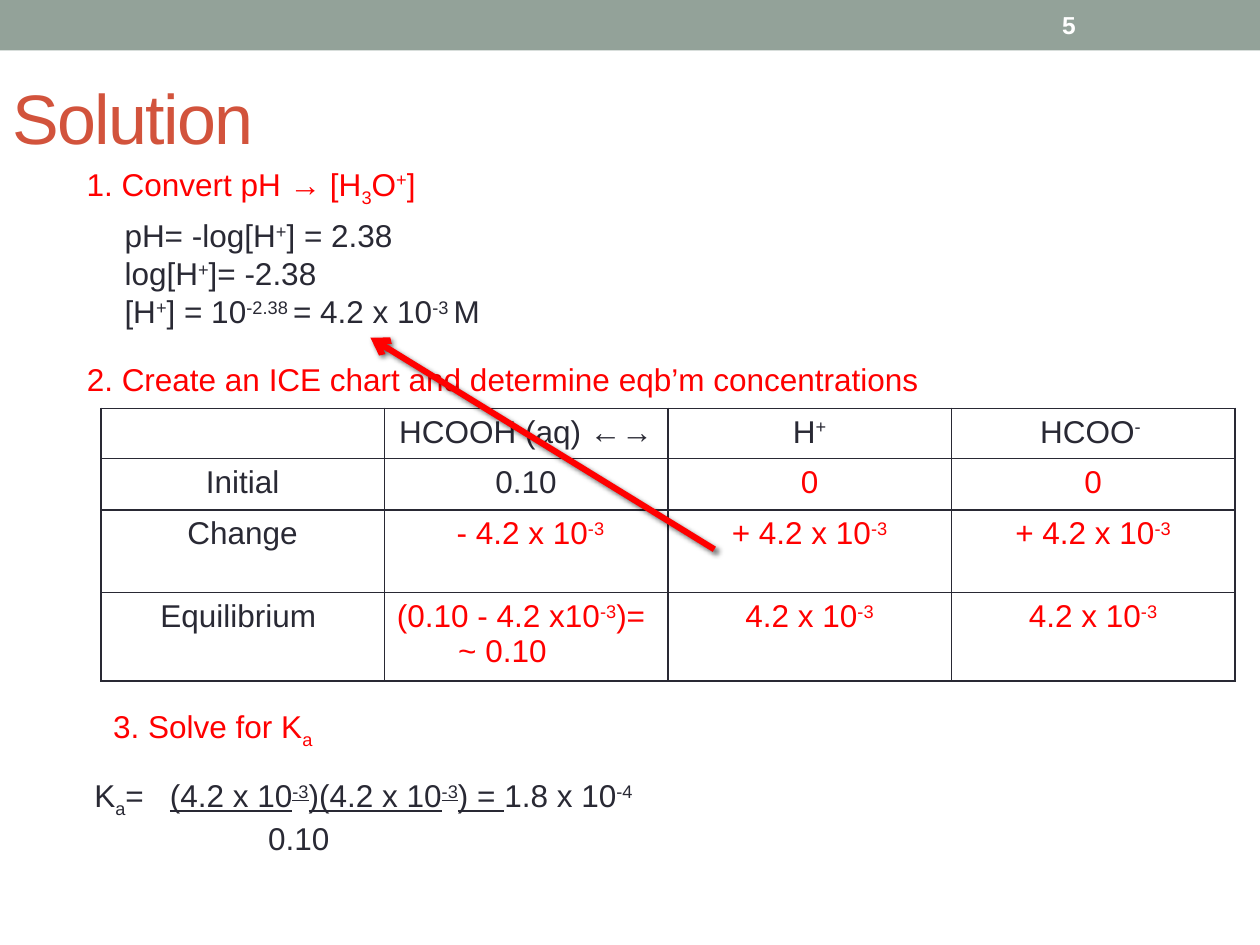
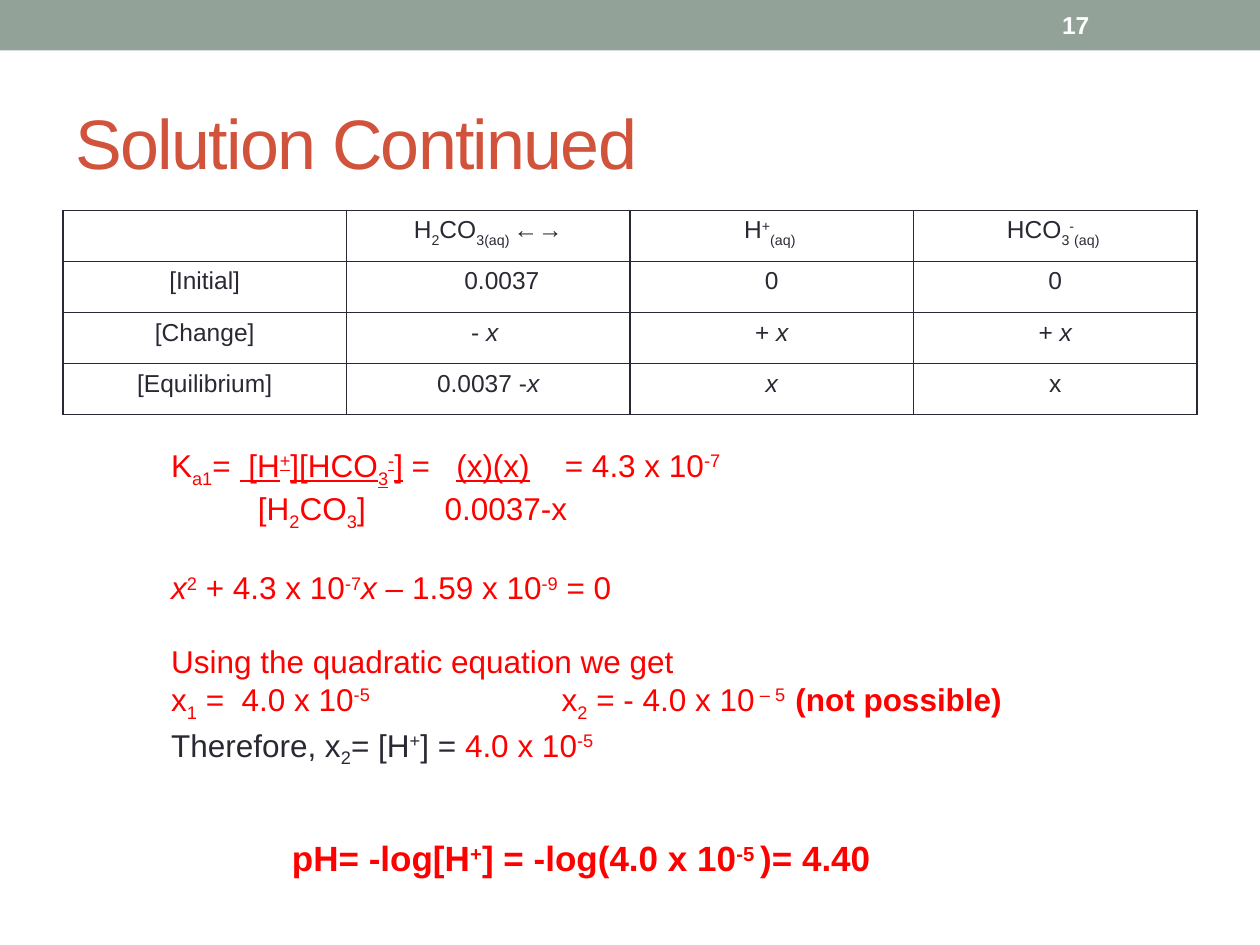
"""Build two slides that solve acid equilibrium problems with ICE tables."""
from lxml import etree
from pptx import Presentation
from pptx.dml.color import RGBColor
from pptx.enum.shapes import MSO_CONNECTOR, MSO_SHAPE
from pptx.enum.text import MSO_ANCHOR, MSO_AUTO_SIZE, PP_ALIGN
from pptx.oxml.ns import qn
from pptx.util import Pt

INK = RGBColor(0x29, 0x29, 0x34)
RED = RGBColor(0xFF, 0x00, 0x00)
RUST = RGBColor(0xD2, 0x53, 0x3C)
SAGE = RGBColor(0x93, 0xA2, 0x99)
WHITE = RGBColor(0xFF, 0xFF, 0xFF)
LEFT, CENTER = PP_ALIGN.LEFT, PP_ALIGN.CENTER
MIDDLE, TOP = MSO_ANCHOR.MIDDLE, MSO_ANCHOR.TOP
NO_FIT = MSO_AUTO_SIZE.NONE
RECT, STRAIGHT = MSO_SHAPE.RECTANGLE, MSO_CONNECTOR.STRAIGHT
FONT = "Arial"
WIDE, HIGH = 720, 540
COL = 162

# Markup is {flags:text}: ^ raised, _ lowered, u underlined, i italic, b bold, r red.
# A line is (markup, space before, tab stops...).
SLIDES = [
    {
        "title": "Solution", "spot": (0, 27.4), "page": "5",
        "table": {
            "spot": (57.6, 233.3), "size": 18, "rows": (28, 29.2, 47.4, 47.4),
            "cells": [
                ["", "HCOOH (aq) ←→", "H{^:+}", "HCOO{^:- }"],
                ["Initial", "0.10", "{r:0}", "{r:0}"],
                ["Change", " {r:- 4.2 x 10}{r^:-3}",
                 "{r:+ 4.2 x 10}{r^:-3}", "{r:+ 4.2 x 10}{r^:-3}"],
                ["Equilibrium ", [("{r:(0.10 - 4.2 x10}{r^:-3}{r:)= }", 0),
                                  ("{r:\t~ 0.10}", 0, 35)],
                 "{r:4.2 x 10}{r^:-3}", "{r:4.2 x 10}{r^:-3}"],
            ],
            "shift": {},
        },
        "texts": [
            (64.1, 120.2, 230, 18, INK, [
                ("pH= -log[H{^:+}] = 2.38", 0),
                ("log[H{^:+}]= -2.38", 0),
                ("[H{^:+}] = 10{^:-2.38 }= 4.2 x 10{^:-3 }M", 0)]),
            (42.5, 90.7, 210, 18, RED, [("1. Convert pH → [H{_:3}O{^:+}]", 0)]),
            (42.5, 202.3, 517, 18, RED, [
                ("2. Create an ICE chart and determine eqb’m concentrations", 0)]),
            (57.6, 400.3, 140, 18, RED, [("3. Solve for K{_:a}", 0)]),
            (46.8, 439.9, 335, 18, INK, [
                ("K{_:a}=\t{u:(4.2 x 10}{u^:-3}{u:)(4.2 x 10}{u^:-3}{u:) = }"
                 "1.8 x 10{^:-4}", 0, 43.2),
                ("\t0.10", 0, 99.4)]),
        ],
        "arrow": (408.2, 313.9, 211.7, 193),
    },
    {
        "title": "Solution Continued", "spot": (36, 41.8), "page": "17",
        "table": {
            "spot": (36, 120.2), "size": 14, "rows": (29.2,) * 4,
            "cells": [
                ["", "H{_:2}CO{_:3(aq) }←→", "H{^:+}{_:(aq) }",
                 "HCO{_:3}{^:-}{_:(aq) }"],
                ["[Initial]", "0.0037", "0", "0"],
                ["[Change]", "- {i:x }", "+ {i:x}", "+ {i:x}"],
                ["[Equilibrium]", "0.0037 -{i:x}", "{i:x}", "x"],
            ],
            "shift": {(1, 1): 15.6},
        },
        "texts": [
            (90.7, 251.3, 584, 18, RED, [
                ("K{_:a1}= {u: [H}{u^:+}{u:][HCO}{u_:3}{u^:-}{u:]} = "
                 "{u:\t(x)(x)\t}= 4.3 x 10{^:-7}", 0, 163, 225),
                ("\t[H{_:2}CO{_:3}]\t0.0037-x", 0, 49.6, 156.3),
                ("{i:x}{^:2} + 4.3 x 10{^:-7}{i:x – }1.59 x 10{^:-9} = 0", 20.7),
                ("Using the quadratic equation we get", 20.7),
                ("x{_:1} =  4.0 x 10{^:-5}\tx{_:2} = - 4.0 x 10{^: – 5  }"
                 "{b:(not possible)}", 0, 223.2)]),
            (90.7, 411.1, 460, 18, INK, [
                ("Therefore, x{_:2}= [H{^:+}] = {r:4.0 x 10}{r^:-5}", 0)]),
            (159.8, 474.5, 360, 20, RED, [
                ("{b:pH= -log[H}{b^:+}{b:] = -log(4.0 x 10}{b^:-5 }{b:)= 4.40}", 0)]),
        ],
        "arrow": None,
    },
]


def node(parent, tag, **attrs):
    """Append a drawing element with the given attributes."""
    child = etree.SubElement(parent, qn(tag))
    for key, val in attrs.items():
        child.set(key, str(val))
    return child


def add_run(para, text, size, color, flags=""):
    """Add one run in the style its flags name."""
    run = para.add_run()
    run.text = text
    font = run.font
    font.name, font.size = FONT, Pt(size)
    font.color.rgb = RED if "r" in flags else color
    font.bold, font.italic = "b" in flags, "i" in flags
    font.underline = "u" in flags
    base = 30000 if "^" in flags else -25000 if "_" in flags else 0
    if base:
        run._r.get_or_add_rPr().set("baseline", str(base))
    return run


def add_lines(frame, lines, size, color, align=LEFT):
    """Fill a text frame with one paragraph a line."""
    for num, (text, gap, *stops) in enumerate(lines):
        para = frame.add_paragraph() if num else frame.paragraphs[0]
        para.alignment, para.space_before = align, Pt(gap)
        if stops:
            tabs = node(para._p.get_or_add_pPr(), "a:tabLst")
            for stop in stops:
                node(tabs, "a:tab", pos=int(Pt(stop)), algn="l")
        for num2, part in enumerate(text.replace("}", "{").split("{")):
            flags, mark, words = part.partition(":") if num2 % 2 else ("", "", part)
            if words:
                add_run(para, words, size, color, flags)


def add_text(slide, left, top, width, size, color, lines):
    """Add a wrapped text box."""
    high = size * 1.2 * len(lines) + 7.2
    box = slide.shapes.add_textbox(Pt(left), Pt(top), Pt(width), Pt(high))
    box.text_frame.word_wrap = True
    add_lines(box.text_frame, lines, size, color)
    return box


def add_frame(slide, title, spot, page):
    """Add the band, title and page number that all slides share."""
    band = slide.shapes.add_shape(RECT, 0, 0, Pt(WIDE), Pt(28.8))
    band.shadow.inherit = False
    band.fill.solid()
    band.fill.fore_color.rgb = SAGE
    band.line.fill.background()
    head = slide.shapes.title
    head.left, head.top = map(Pt, spot)
    head.width, head.height = Pt(648), Pt(77.8)
    frame = head.text_frame
    frame.auto_size, frame.vertical_anchor = NO_FIT, MIDDLE
    para = frame.paragraphs[0]
    para.alignment = LEFT
    run = add_run(para, title, 40, RUST)
    run._r.get_or_add_rPr().set("spc", "-100")
    box = add_text(slide, 599.8, 1.4, 84, 14, WHITE, [("{b:" + page + "}", 0)])
    box.height = Pt(25.9)
    box.text_frame.vertical_anchor = MIDDLE


def add_grid(slide, spot, size, rows, cells, shift):
    """Add an ICE table with thin dark borders."""
    left, top = spot
    count = len(cells[0])
    grid = slide.shapes.add_table(len(rows), count, Pt(left), Pt(top),
                                  Pt(COL * count), Pt(sum(rows))).table
    grid.first_row = grid.horz_banding = False
    for col in grid.columns:
        col.width = Pt(COL)
    for y, high in enumerate(rows):
        grid.rows[y].height = Pt(high)
        for x, text in enumerate(cells[y]):
            cell = grid.cell(y, x)
            cell.vertical_anchor = TOP
            cell.margin_left = Pt(7.2 + shift.get((y, x), 0))
            if isinstance(text, list):
                add_lines(cell.text_frame, text, size, INK)
            else:
                add_lines(cell.text_frame, [(text, 0)], size, INK, CENTER)
            props = cell._tc.get_or_add_tcPr()
            for side in "LRTB":
                line = node(props, "a:ln" + side, w=int(Pt(1)))
                node(node(line, "a:solidFill"), "a:srgbClr", val=INK)
            cell.fill.background()


def add_arrow(slide, ends):
    """Add the red arrow with its soft shadow."""
    arrow = slide.shapes.add_connector(STRAIGHT, *map(Pt, ends))
    arrow.line.color.rgb, arrow.line.width = RED, Pt(3.5)
    node(arrow.line._get_or_add_ln(), "a:tailEnd", type="arrow")
    glow = node(node(arrow._element.spPr, "a:effectLst"), "a:outerShdw",
                blurRad=int(Pt(3)), dist=int(Pt(2)), dir=45 * 60000)
    node(node(glow, "a:srgbClr", val="000000"), "a:alpha", val=60000)


def main():
    """Build and save the slides."""
    deck = Presentation()
    deck.slide_width, deck.slide_height = Pt(WIDE), Pt(HIGH)
    for data in SLIDES:
        slide = deck.slides.add_slide(deck.slide_layouts[5])
        add_frame(slide, data["title"], data["spot"], data["page"])
        add_grid(slide, **data["table"])
        for text in data["texts"]:
            add_text(slide, *text)
        if data["arrow"]:
            add_arrow(slide, data["arrow"])
    deck.save("out.pptx")


if __name__ == "__main__":
    main()
